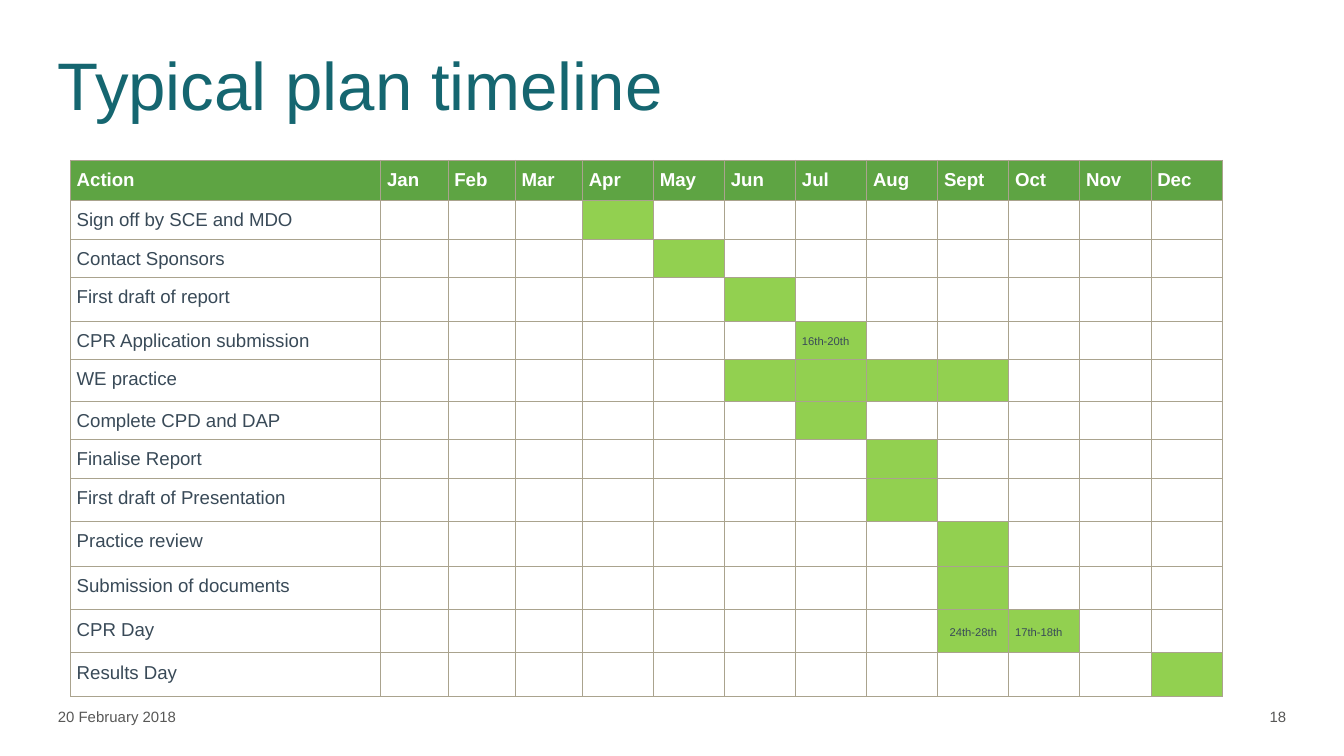
from dataclasses import dataclass, field
from typing import Optional

from lxml.etree import SubElement
from pptx import Presentation
from pptx.dml.color import RGBColor
from pptx.enum.text import MSO_ANCHOR, PP_ALIGN
from pptx.oxml.ns import qn
from pptx.slide import Slide
from pptx.table import Table, _Cell
from pptx.text.text import TextFrame
from pptx.util import Inches, Pt

TEAL = RGBColor(0x15, 0x66, 0x70)
GREY = RGBColor(0x57, 0x57, 0x56)
SLATE = RGBColor(0x39, 0x4A, 0x58)
WHITE = RGBColor(0xFF, 0xFF, 0xFF)
HEADER_GREEN = RGBColor(0x5E, 0xA4, 0x43)
ACTIVE_GREEN = RGBColor(0x92, 0xD0, 0x50)
BORDER = RGBColor(0xAA, 0xA3, 0x8E)

FONT = "Arial"
SLIDE_WIDTH = Inches(10)
SLIDE_HEIGHT = SLIDE_WIDTH * 9 // 16
MONTHS = "Jan Feb Mar Apr May Jun Jul Aug Sept Oct Nov Dec".split()
COLUMN_SHARES = [23.1] + [5] * 3 + [5.29] * 9
HEADER_SHARE = 5.33
CELL_MARGIN = Pt(3.4)


@dataclass(frozen=True)
class Action:
    """A plan action with its active months, dates and row height in percent."""

    name: str
    months: str
    height: float
    dates: dict[str, str] = field(default_factory=dict)


ACTIONS = [
    Action("Sign off by SCE and MDO", "Apr", 4.95),
    Action("Contact Sponsors", "May", 4.95),
    Action("First draft of report", "Jun", 5.8),
    Action("CPR Application submission", "Jul", 4.95, {"Jul": "16th-20th"}),
    Action("WE practice", "Jun Jul Aug Sept", 5.5),
    Action("Complete CPD and DAP", "Jul", 4.95),
    Action("Finalise Report", "Aug", 4.95),
    Action("First draft of Presentation", "Aug", 5.7),
    Action("Practice review", "Sept", 6.05),
    Action("Submission of documents", "Sept", 5.7),
    Action("CPR Day", "Sept Oct", 5.7, {"Sept": "24th-28th", "Oct": "17th-18th"}),
    Action("Results Day", "Dec", 5.8),
]


def across(percent: float) -> int:
    """Return a share of the slide's width."""
    return round(SLIDE_WIDTH * percent / 100)


def down(percent: float) -> int:
    """Return a share of the slide's height."""
    return round(SLIDE_HEIGHT * percent / 100)


def write(frame: TextFrame, text: str, *, size: float, color: RGBColor, bold: bool = False,
          align: PP_ALIGN = PP_ALIGN.LEFT, spacing: float = 1) -> None:
    """Write one formatted paragraph into a text frame."""
    paragraph = frame.paragraphs[0]
    paragraph.alignment = align
    paragraph.line_spacing = spacing
    if not text:
        SubElement(paragraph._p, qn("a:endParaRPr"), sz=str(round(size * 100)))
        return
    run = paragraph.add_run()
    run.text = text
    run.font.name = FONT
    run.font.size = Pt(size)
    run.font.bold = bold
    run.font.color.rgb = color


def add_label(slide: Slide, text: str, left: float, top: float, width: float, height: float,
              anchor: MSO_ANCHOR = MSO_ANCHOR.MIDDLE, **text_format) -> None:
    """Add a text box without margins, placed by slide shares."""
    shape = slide.shapes.add_textbox(across(left), down(top), across(width), down(height))
    frame = shape.text_frame
    frame.word_wrap = True
    frame.vertical_anchor = anchor
    frame.margin_left = frame.margin_right = frame.margin_top = frame.margin_bottom = 0
    write(frame, text, **text_format)


def add_borders(cell: _Cell) -> None:
    """Draw a thin line on all four sides of a cell."""
    properties = cell._tc.get_or_add_tcPr()
    for position, side in enumerate(("a:lnL", "a:lnR", "a:lnT", "a:lnB")):
        line = SubElement(properties, qn(side), w=str(Pt(0.5)))
        properties.insert(position, line)
        fill = SubElement(line, qn("a:solidFill"))
        SubElement(fill, qn("a:srgbClr"), val=str(BORDER))


def fill_cell(cell: _Cell, text: str, fill: Optional[RGBColor] = None,
              anchor: MSO_ANCHOR = MSO_ANCHOR.TOP, **text_format) -> None:
    """Set a cell's text, fill, margins and borders."""
    cell.margin_left = cell.margin_right = cell.margin_top = cell.margin_bottom = CELL_MARGIN
    cell.vertical_anchor = anchor
    if fill is None:
        cell.fill.background()
    else:
        cell.fill.solid()
        cell.fill.fore_color.rgb = fill
    add_borders(cell)
    write(cell.text_frame, text, spacing=1.15, **text_format)


def fill_action(table: Table, row: int, action: Action) -> None:
    """Fill one row with an action and its active months."""
    fill_cell(table.cell(row, 0), action.name, size=10, color=SLATE)
    active = action.months.split()
    for column, month in enumerate(MONTHS, start=1):
        fill_cell(
            table.cell(row, column), action.dates.get(month, ""),
            fill=ACTIVE_GREEN if month in active else None,
            anchor=MSO_ANCHOR.MIDDLE, size=6, color=SLATE,
            align=PP_ALIGN.CENTER if month == "Sept" else PP_ALIGN.LEFT,
        )


def add_timeline(slide: Slide) -> None:
    """Add the table of actions by month."""
    row_shares = [HEADER_SHARE] + [action.height for action in ACTIONS]
    table = slide.shapes.add_table(
        len(row_shares), len(COLUMN_SHARES), across(5.24), down(21.2),
        across(sum(COLUMN_SHARES)), down(sum(row_shares)),
    ).table
    table.horz_banding = False
    for column, share in zip(table.columns, COLUMN_SHARES):
        column.width = across(share)
    for row, share in zip(table.rows, row_shares):
        row.height = down(share)
    for column, heading in enumerate(["Action"] + MONTHS):
        fill_cell(table.cell(0, column), heading, fill=HEADER_GREEN,
                  size=10, color=WHITE, bold=True)
    for row, action in enumerate(ACTIONS, start=1):
        fill_action(table, row, action)


def main() -> None:
    """Build and save the timeline slide."""
    presentation = Presentation()
    presentation.slide_width, presentation.slide_height = SLIDE_WIDTH, SLIDE_HEIGHT
    slide = presentation.slides.add_slide(presentation.slide_layouts[6])
    add_label(slide, "Typical plan timeline", 4.3, 5.7, 80.3, 22.95,
              anchor=MSO_ANCHOR.TOP, size=36, color=TEAL)
    add_label(slide, "20 February 2018", 4.3, 93.2, 18.1, 3.2, size=8, color=GREY)
    add_label(slide, "18", 86.2, 93.2, 9.5, 3.2, size=8, color=GREY, align=PP_ALIGN.RIGHT)
    add_timeline(slide)
    presentation.save("out.pptx")


if __name__ == "__main__":
    main()
